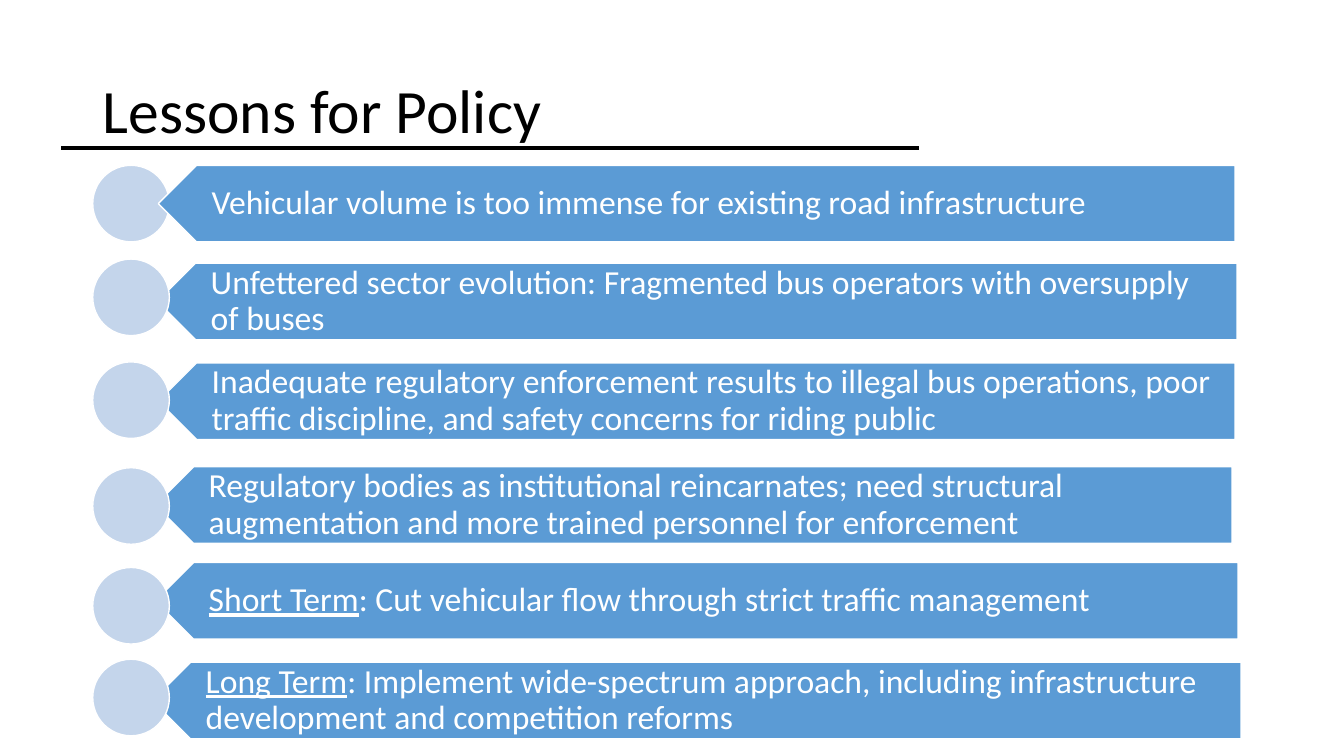
from dataclasses import dataclass

from lxml.etree import SubElement
from pptx import Presentation
from pptx.dml.color import RGBColor
from pptx.enum.shapes import MSO_CONNECTOR, MSO_SHAPE
from pptx.enum.text import MSO_ANCHOR, MSO_AUTO_SIZE, PP_ALIGN
from pptx.oxml.ns import qn
from pptx.util import Inches, Pt


@dataclass(frozen=True)
class Theme:
    font: str = "Calibri"
    title_size: int = 44
    lesson_size: int = 24
    black: RGBColor = RGBColor(0x00, 0x00, 0x00)
    white: RGBColor = RGBColor(0xFF, 0xFF, 0xFF)
    banner: RGBColor = RGBColor(0x5B, 0x9B, 0xD5)
    circle: RGBColor = RGBColor(0xC4, 0xD5, 0xEB)


THEME = Theme()
ROW_HEIGHT = 0.76
CIRCLE_LEFT = 0.92
TEXT_OFFSET = 0.19  # from the banner's tip to its text box

# circle top, banner left, banner top, banner width, underlined lead, text
LESSONS = [
    (1.64, 1.57, 1.64, 10.68, "",
     "Vehicular volume is too immense for existing road infrastructure"),
    (2.57, 1.56, 2.61, 10.71, "",
     "Unfettered sector evolution: Fragmented bus operators with oversupply of buses"),
    (3.59, 1.57, 3.6, 10.68, "",
     "Inadequate regulatory enforcement results to illegal bus operations, "
     "poor traffic discipline, and safety concerns for riding public"),
    (4.64, 1.54, 4.63, 10.68, "",
     "Regulatory bodies as institutional reincarnates; need structural "
     "augmentation and more trained personnel for enforcement"),
    (5.63, 1.54, 5.58, 10.74, "Short Term",
     ": Cut vehicular flow through strict traffic management"),
    (6.54, 1.51, 6.57, 10.8, "Long Term",
     ": Implement wide-spectrum approach, including infrastructure "
     "development and competition reforms"),
]


def style_run(r, size, color):
    r.font.name = THEME.font
    r.font.size = Pt(size)
    r.font.color.rgb = color


def set_title(s, text):
    title = s.shapes.title
    title.left, title.top = Inches(0.92), Inches(0.4)
    title.width, title.height = Inches(11.5), Inches(1.45)
    tf = title.text_frame
    tf.text = text
    tf.auto_size = MSO_AUTO_SIZE.NONE
    tf.vertical_anchor = MSO_ANCHOR.MIDDLE
    p = tf.paragraphs[0]
    p.alignment = PP_ALIGN.LEFT
    p.line_spacing = 0.9
    style_run(p.runs[0], THEME.title_size, THEME.black)


def add_title_rule(s):
    rule = s.shapes.add_connector(
        MSO_CONNECTOR.STRAIGHT, Inches(0.61), Inches(1.47), Inches(9.11), Inches(1.47))
    rule.line.color.rgb = THEME.black
    rule.line.width = Pt(3)
    SubElement(rule._element.spPr, qn("a:effectLst"))


def add_outlined_shape(s, kind, left, top, width, fill):
    sp = s.shapes.add_shape(
        kind, Inches(left), Inches(top), Inches(width), Inches(ROW_HEIGHT))
    sp.shadow.inherit = False
    sp.fill.solid()
    sp.fill.fore_color.rgb = fill
    sp.line.color.rgb = THEME.white
    sp.line.width = Pt(1)
    return sp


def add_circle(s, top):
    add_outlined_shape(s, MSO_SHAPE.OVAL, CIRCLE_LEFT, top, ROW_HEIGHT, THEME.circle)


def add_banner(s, left, top, width, lead, text):
    """Add a left-pointing banner with upright text over it."""
    arrow = add_outlined_shape(s, MSO_SHAPE.PENTAGON, left, top, width, THEME.banner)
    arrow.rotation = 180
    box = s.shapes.add_textbox(
        Inches(left + TEXT_OFFSET), Inches(top),
        Inches(width - TEXT_OFFSET), Inches(ROW_HEIGHT))
    tf = box.text_frame
    tf.word_wrap = True
    tf.vertical_anchor = MSO_ANCHOR.MIDDLE
    tf.margin_left, tf.margin_right = Inches(0.34), Inches(0.19)
    tf.margin_top = tf.margin_bottom = Inches(0.1)
    p = tf.paragraphs[0]
    p.line_spacing = 0.9
    for part in filter(None, (lead, text)):
        r = p.add_run()
        r.text = part
        style_run(r, THEME.lesson_size, THEME.white)
        r.font.underline = part == lead


def main():
    prs = Presentation()
    prs.slide_width, prs.slide_height = Inches(13.33), Inches(7.5)
    s = prs.slides.add_slide(prs.slide_layouts[5])
    set_title(s, "Lessons for Policy")
    for i, (circle_top, *banner) in enumerate(LESSONS):
        # Only the first banner's tip lies over its circle.
        if i == 0:
            add_circle(s, circle_top)
            add_banner(s, *banner)
        else:
            add_banner(s, *banner)
            add_circle(s, circle_top)
    add_title_rule(s)
    prs.save("out.pptx")


if __name__ == "__main__":
    main()
